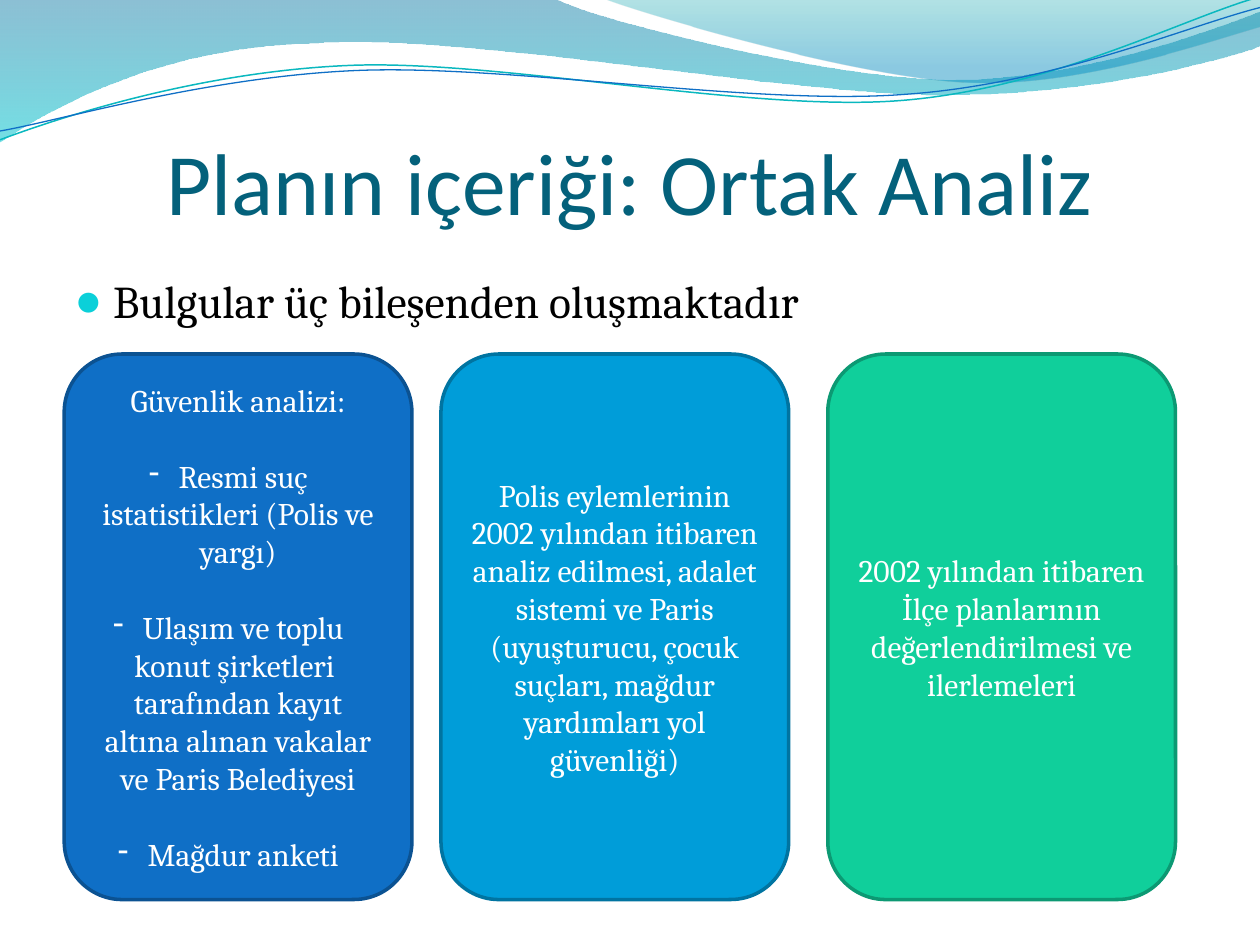
import pptx
import pptx.util
import pptx.dml.color
import pptx.enum.shapes
import pptx.enum.text
import pptx.oxml.ns
from lxml import etree

COLORS = {
    "title": "04617B", "body": "000000", "bullet": "0BD0D9", "white": "FFFFFF",
    "blue": "0F6FC6", "blue_edge": "0B5292",
    "sky": "009DD9", "sky_edge": "0074A1",
    "green": "10CF9B", "green_edge": "0C9973",
    "aqua": "00C6CF", "teal": "00A1A9", "steel": "008BBF", "teal_line": "0AB8BF",
}
WIDTH, HEIGHT = 10, 7.5
LINE_PITCH = 21.6   # height of one 18 pt line, used as the gap between items
CARD_TOP, CARD_WIDTH, CARD_HEIGHT = 2.81, 2.76, 4.33

# Each band or strand: a start point, then straight points (2 numbers)
# or Bézier segments (6 numbers), in inches.
BANDS = [
    ([(0, 0), (4.4, -0.01), (4.76, 0.17, 6.64, 0.63, 7.58, 0.63),
      (8.53, 0.63, 9.58, 0.26, 10, 0.09), (10.01, 0.36),
      (9.83, 0.44, 8.7, 0.76, 7.46, 0.75), (6.22, 0.75, 3.82, 0.28, 2.57, 0.34),
      (1.29, 0.36, 0.46, 0.83, -0.01, 1.13)],
     [(0, "sky_edge", 45), (1, "aqua", 55)]),
    ([(4.79, -0.01), (5.09, 0.11, 6.82, 0.62, 7.69, 0.65),
      (8.56, 0.69, 9.61, 0.32, 10, 0.21), (10, 0)],
     [(0, "teal", 30), (0.8, "steel", 45)]),
]
STRANDS = [
    ([(0, 1.11), (0.48, 0.93, 1.58, 0.57, 2.77, 0.52),
      (3.95, 0.47, 5.93, 0.89, 7.13, 0.8), (8.33, 0.71, 9.38, 0.15, 9.98, -0.02)],
     "teal_line", 0.85),
    ([(0, 1.04), (0.47, 0.96, 1.64, 0.61, 2.83, 0.56),
      (4.03, 0.51, 5.97, 0.84, 7.17, 0.75), (8.36, 0.67, 9.41, 0.21, 10, 0.06)],
     "blue", 0.75),
]
CARDS = [
    (0.51, "blue", "Güvenlik analizi:", [
        "Resmi suç istatistikleri (Polis ve yargı)",
        "Ulaşım ve toplu konut şirketleri  tarafından kayıt altına alınan "
        "vakalar ve Paris Belediyesi",
        "Mağdur anketi"]),
    (3.5, "sky",
     "Polis eylemlerinin 2002 yılından itibaren analiz edilmesi, adalet sistemi "
     "ve Paris (uyuşturucu, çocuk suçları, mağdur yardımları yol güvenliği)", []),
    (6.57, "green",
     "2002 yılından itibaren İlçe planlarının değerlendirilmesi ve ilerlemeleri", []),
]


def rgb(name):
    return pptx.dml.color.RGBColor.from_string(COLORS[name])


def add_child(parent, tag, **attributes):
    child = etree.SubElement(parent, pptx.oxml.ns.qn(tag))
    for key, value in attributes.items():
        child.set(key, str(value))
    return child


def add_text(para, text, size, font, color, centred=True):
    if centred:
        para.alignment = pptx.enum.text.PP_ALIGN.CENTER
    span = para.add_run()
    span.text = text
    span.font.size = pptx.util.Pt(size)
    span.font.name = font
    span.font.color.rgb = rgb(color)


def place(shape, left, top, width, height):
    shape.left, shape.top = pptx.util.Inches(left), pptx.util.Inches(top)
    shape.width, shape.height = pptx.util.Inches(width), pptx.util.Inches(height)


def add_curve(page, segments, close):
    """Build the outline through its anchors, then bend the Bézier segments."""
    anchors = [(pptx.util.Inches(s[-2]), pptx.util.Inches(s[-1])) for s in segments]
    builder = page.shapes.build_freeform(*anchors[0], scale=1.0)
    builder.add_line_segments(anchors[1:], close=close)
    shape = builder.convert_to_shape()
    shape.shadow.inherit = False
    sides = list(shape.element.spPr.iter(pptx.oxml.ns.qn("a:lnTo")))
    for side, segment in zip(sides, segments[1:]):
        if len(segment) == 6:
            bend = etree.Element(pptx.oxml.ns.qn("a:cubicBezTo"))
            for x, y in zip(segment[::2], segment[1::2]):
                add_child(bend, "a:pt", x=pptx.util.Inches(x) - shape.left,
                          y=pptx.util.Inches(y) - shape.top)
            side.getparent().replace(side, bend)
    return shape


def add_band(page, segments, stops):
    band = add_curve(page, segments, True)
    band.line.fill.background()
    band.fill.gradient()
    band.fill.gradient_angle = 270
    for stop, (position, color, opacity) in zip(band.fill.gradient_stops, stops):
        stop.position = position
        stop.color.rgb = rgb(color)
    colour_nodes = band.element.spPr.iter(pptx.oxml.ns.qn("a:srgbClr"))
    for node, (position, color, opacity) in zip(list(colour_nodes), stops):
        add_child(node, "a:alpha", val=opacity * 1000)


def add_strand(page, segments, color, weight):
    strand = add_curve(page, segments, False)
    strand.fill.background()
    strand.line.color.rgb = rgb(color)
    strand.line.width = pptx.util.Pt(weight)


def format_title(page, text):
    title = page.shapes.title
    place(title, 0.05 * WIDTH, 0.08 * HEIGHT, 0.9 * WIDTH, 1.25)
    frame = title.text_frame
    frame.auto_size = pptx.enum.text.MSO_AUTO_SIZE.NONE
    frame.vertical_anchor = pptx.enum.text.MSO_ANCHOR.BOTTOM
    frame.margin_left = frame.margin_right = frame.margin_bottom = 0
    frame.margin_top = pptx.util.Inches(0.05)
    add_text(frame.paragraphs[0], text, 50, "Calibri", "title")


def add_lead(page, text):
    box = page.shapes.add_textbox(0, 0, 0, 0)
    place(box, 0.05 * WIDTH, 2.12, 0.9 * WIDTH, 0.64 * HEIGHT)
    box.text_frame.word_wrap = True
    para = box.text_frame.paragraphs[0]
    para.space_before = pptx.util.Pt(5.2)
    add_text(para, text, 26, "Cambria", "body", centred=False)
    props = para._p.get_or_add_pPr()
    indent = pptx.util.Inches(0.3)
    props.set("marL", str(indent))
    props.set("indent", str(-indent))
    add_child(add_child(props, "a:buClr"), "a:srgbClr", val=COLORS["bullet"])
    add_child(props, "a:buSzPct", val=95000)
    add_child(props, "a:buFont", typeface="Calibri")
    add_child(props, "a:buChar", char="●")


def add_card(page, left, color, lead, items):
    card = page.shapes.add_shape(pptx.enum.shapes.MSO_SHAPE.ROUNDED_RECTANGLE, 0, 0, 0, 0)
    place(card, left, CARD_TOP, CARD_WIDTH, CARD_HEIGHT)
    card.shadow.inherit = False
    card.fill.solid()
    card.fill.fore_color.rgb = rgb(color)
    card.line.color.rgb = rgb(color + "_edge")
    card.line.width = pptx.util.Pt(2)
    frame = card.text_frame
    frame.word_wrap = True
    frame.vertical_anchor = pptx.enum.text.MSO_ANCHOR.MIDDLE
    add_text(frame.paragraphs[0], lead, 18, "Cambria", "white")
    for item in items:
        para = frame.add_paragraph()
        para.space_before = pptx.util.Pt(LINE_PITCH)
        add_text(para, item, 18, "Cambria", "white")
        add_child(para._p.get_or_add_pPr(), "a:buChar", char="-")


def main():
    deck = pptx.Presentation()
    deck.slide_width = pptx.util.Inches(WIDTH)
    deck.slide_height = pptx.util.Inches(HEIGHT)
    page = deck.slides.add_slide(deck.slide_layouts[5])

    # Wave along the top
    for band in BANDS:
        add_band(page, *band)
    for strand in STRANDS:
        add_strand(page, *strand)

    # Title and lead line
    format_title(page, "Planın içeriği: Ortak Analiz")
    add_lead(page, "Bulgular üç bileşenden oluşmaktadır")

    # Three components
    for card in CARDS:
        add_card(page, *card)
    deck.save("out.pptx")


if __name__ == "__main__":
    main()
